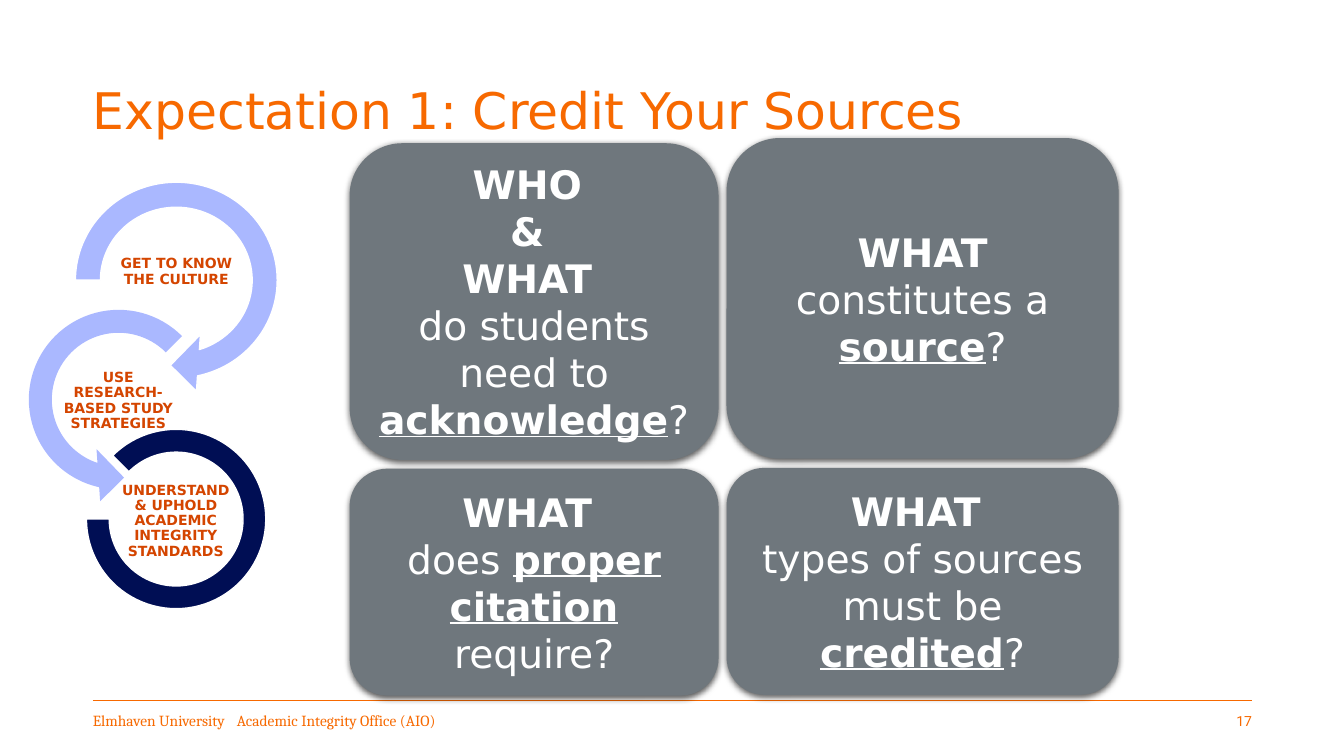
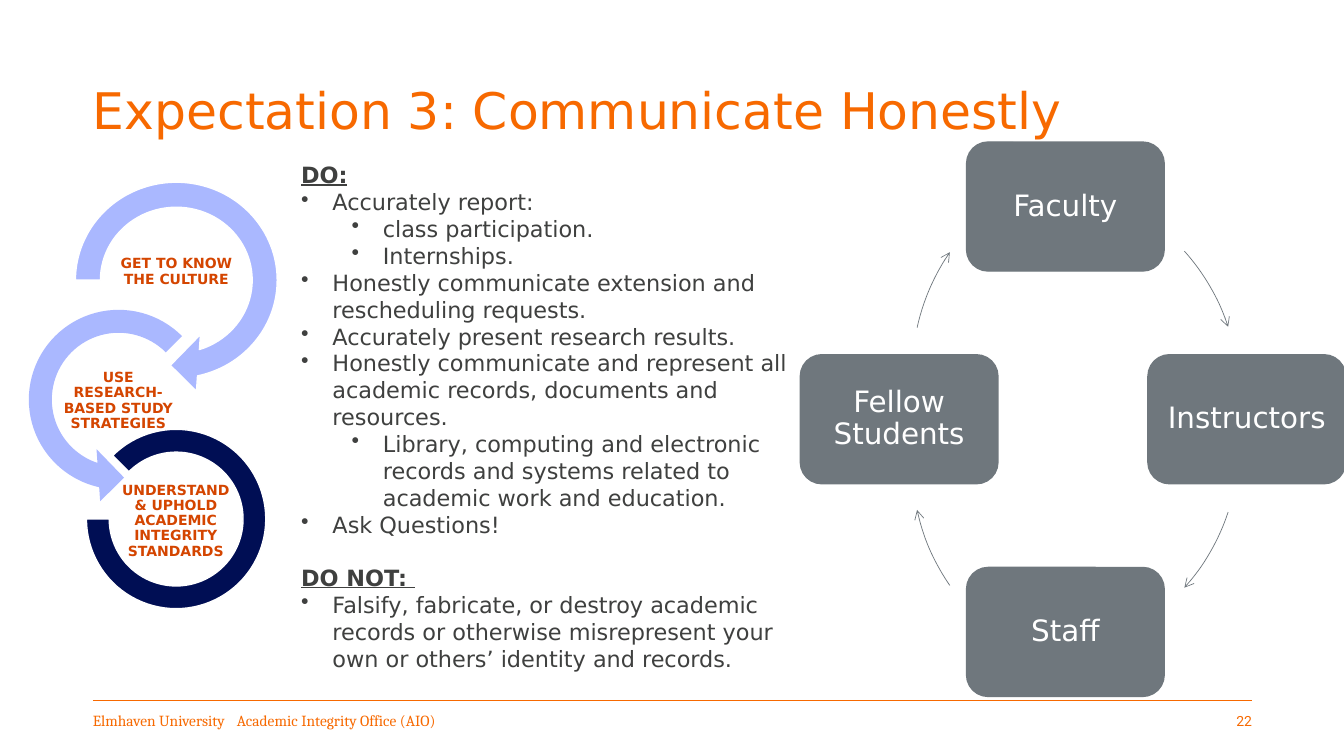
from lxml import etree
from pptx import Presentation
from pptx.dml.color import RGBColor
from pptx.enum.shapes import MSO_CONNECTOR, MSO_SHAPE
from pptx.enum.text import MSO_ANCHOR, PP_ALIGN
from pptx.oxml.ns import qn
from pptx.util import Cm, Pt

ORANGE = RGBColor(0xF7, 0x69, 0x00)
RUST = RGBColor(0xD4, 0x45, 0x00)
PERIWINKLE = RGBColor(0xAA, 0xB8, 0xFF)
NAVY = RGBColor(0x00, 0x0E, 0x54)
GRAY = RGBColor(0x6F, 0x77, 0x7D)
CHARCOAL = RGBColor(0x3F, 0x40, 0x3F)
WHITE = RGBColor(0xFF, 0xFF, 0xFF)

SANS, SERIF, NUMERAL = "DejaVu Sans", "Cambria", "Roboto"
LEFT, CENTER, RIGHT = PP_ALIGN.LEFT, PP_ALIGN.CENTER, PP_ALIGN.RIGHT
TOP, MIDDLE = MSO_ANCHOR.TOP, MSO_ANCHOR.MIDDLE
STRAIGHT = MSO_CONNECTOR.STRAIGHT
ROUNDED, ARC = MSO_SHAPE.ROUNDED_RECTANGLE, MSO_SHAPE.ARC
CIRCULAR, LEFT_CIRCULAR = MSO_SHAPE.CIRCULAR_ARROW, MSO_SHAPE.LEFT_CIRCULAR_ARROW
BLOCK_ARC = MSO_SHAPE.BLOCK_ARC


def write(shape, lines, size, color, font=SANS, align=LEFT, anchor=MIDDLE,
          spacing=1.0, margins=(0, 0.13)):
    frame = shape.text_frame
    frame.word_wrap = True
    frame.vertical_anchor = anchor
    frame.margin_left = frame.margin_right = Cm(margins[0])
    frame.margin_top = frame.margin_bottom = Cm(margins[1])
    for index, line in enumerate(lines):
        para = frame.add_paragraph() if index else frame.paragraphs[0]
        para.alignment = align
        para.line_spacing = spacing
        for text, style in line:
            span = para.add_run()
            span.text = text
            span.font.name = font
            span.font.size = Pt(size)
            span.font.color.rgb = color
            span.font.bold = "b" in style
            span.font.underline = "u" in style


def draw(page, kind, box, fill=None, line=None, width=1, adjustments=()):
    shape = page.shapes.add_shape(kind, *map(Cm, box))
    shape.shadow.inherit = False
    for index, value in enumerate(adjustments):
        shape.adjustments[index] = value
    for part, color in ((shape.fill, fill), (shape.line.fill, line)):
        if color is None:
            part.background()
        else:
            part.solid()
            part.fore_color.rgb = color
    if line is not None:
        shape.line.width = Pt(width)
    return shape


FOOTERS = [
    (2.34, 3.6, "Elmhaven University", 11, SERIF, LEFT),
    (5.97, 8, "Academic Integrity Office (AIO)", 11, SERIF, LEFT),
]
STEPS = [
    (CIRCULAR, (1.5, 4.19, 5.89, 5.74), PERIWINKLE, WHITE, (0.11, 11.423, 45, 108, 0.125),
     (2.82, 5.56, 3.25, 2.59), "GET TO KNOW THE CULTURE"),
    (LEFT_CIRCULAR, (0.36, 7.44, 5.26, 5.26), PERIWINKLE, None, (0.11, 11.423, 63, 189, 0.125),
     (1.52, 9.37, 2.92, 1.47), "USE RESEARCH-BASED STUDY STRATEGIES"),
    (BLOCK_ARC, (2.18, 10.82, 4.52, 4.52), NAVY, WHITE, (135, 108, 0.127),
     (2.97, 12.4, 2.92, 1.47), "UNDERSTAND & UPHOLD ACADEMIC INTEGRITY STANDARDS"),
]

deck = Presentation()
deck.slide_width, deck.slide_height = Cm(33.87), Cm(19.05)
pages = []
for title, number in (("Expectation 1: Credit Your Sources", "17"),
                      ("Expectation 3: Communicate Honestly", "22")):
    page = deck.slides.add_slide(deck.slide_layouts[6])
    pages.append(page)
    rule = page.shapes.add_connector(STRAIGHT, Cm(2.34), Cm(17.65), Cm(31.55), Cm(17.65))
    rule.line.color.rgb = ORANGE
    rule.line.width = Pt(0.5)
    etree.SubElement(rule._element.spPr, qn("a:effectLst"))
    page_number = (26.22, 5.33, number, 10, NUMERAL, RIGHT)
    for left, width, text, size, font, align in FOOTERS + [page_number]:
        box = page.shapes.add_textbox(Cm(left), Cm(17.65), Cm(width), Cm(1.02))
        write(box, [[(text, "")]], size, ORANGE, font, align)
    box = page.shapes.add_textbox(Cm(2.34), Cm(1.02), Cm(29.21), Cm(3.68))
    write(box, [[(title, "")]], 36, ORANGE, spacing=0.9)
    for kind, place, fill, line, adjustments, label_place, label in STEPS:
        draw(page, kind, place, fill, line, adjustments=adjustments)
        box = page.shapes.add_textbox(*map(Cm, label_place))
        write(box, [[(label, "b")]], 10, RUST, align=CENTER, spacing=0.9, margins=(0.03, 0.03))

sources_page, honesty_page = pages

QUESTIONS = [
    ((8.81, 3.61, 9.3, 7.98),
     [[("WHO ", "b")], [("& ", "b")], [("WHAT ", "b")],
      [("do students need to ", ""), ("acknowledge", "bu"), ("? ", "")]]),
    ((18.31, 3.48, 9.88, 8.08),
     [[("WHAT", "b"), (" constitutes a ", ""), ("source", "bu"), ("?", "")]]),
    ((8.81, 11.81, 9.3, 5.72),
     [[("WHAT ", "b")],
      [("does ", ""), ("proper citation", "bu"), (" ", "b"), ("require?", "")]]),
    ((18.31, 11.79, 9.88, 5.72),
     [[("WHAT ", "b")],
      [("types of sources must be ", ""), ("credited", "bu"), ("?", "")]]),
]
for place, lines in QUESTIONS:
    card = draw(sources_page, ROUNDED, place, GRAY)
    write(card, lines, 28, WHITE, align=CENTER, margins=(0.25, 0.13))
    effects = card._element.spPr.find(qn("a:effectLst"))
    shadow = etree.SubElement(effects, qn("a:outerShdw"), blurRad=str(Pt(4.5)),
                              dist=str(Pt(1.5)), dir="5400000", rotWithShape="0")
    shade = etree.SubElement(shadow, qn("a:srgbClr"), val="000000")
    etree.SubElement(shade, qn("a:alpha"), val="63000")

CYCLE = [
    ("Faculty", 24.36, 3.58, (20.5, 4.55), (318.1, 341.8)),
    ("Instructors", 28.93, 8.94, (20.5, 5.87), (18.2, 41.9)),
    ("Staff", 24.36, 14.3, (22.99, 6.35), (145.4, 167.7)),
    ("Fellow Students", 20.17, 8.94, (22.99, 4.04), (192.3, 214.6)),
]
DIAMETER = 10.72
for name, left, top, corner, degrees in CYCLE:
    node = draw(honesty_page, ROUNDED, (left, top, 4.98, 3.25), GRAY, GRAY)
    write(node, [[(name, "")]], 21, WHITE, align=CENTER, spacing=0.9, margins=(0.23, 0.23))
    arrow = draw(honesty_page, ARC, (*corner, DIAMETER, DIAMETER), line=GRAY, width=0.5,
                 adjustments=[angle * 0.6 for angle in degrees])
    outline = arrow._element.spPr.find(qn("a:ln"))
    etree.SubElement(outline, qn("a:tailEnd"), type="arrow")

ADVICE = [
    (0, "DO:"),
    (1, "Accurately report:"),
    (2, "class participation."),
    (2, "Internships."),
    (1, "Honestly communicate extension and rescheduling requests."),
    (1, "Accurately present research results."),
    (1, "Honestly communicate and represent all academic records, documents and resources."),
    (2, "Library, computing and electronic records and systems related to "
        "academic work and education."),
    (1, "Ask Questions!"),
    (0, "DO NOT: "),
    (1, "Falsify, fabricate, or destroy academic records or otherwise misrepresent "
        "your own or others’ identity and records."),
]
INDENTS = {1: 0.79, 2: 2.06}
box = honesty_page.shapes.add_textbox(Cm(7.34), Cm(3.94), Cm(12.83), Cm(13.26))
write(box, [[(text, "" if level else "bu")] for level, text in ADVICE], 16, CHARCOAL,
      anchor=TOP, margins=(0.25, 0.13))
for index, (para, (level, text)) in enumerate(zip(box.text_frame.paragraphs, ADVICE)):
    if level:
        para.level = level - 1
        properties = para._p.get_or_add_pPr()
        properties.set("marL", str(Cm(INDENTS[level])))
        properties.set("indent", str(-Cm(INDENTS[1])))
        etree.SubElement(properties, qn("a:buChar"), char="•")
    elif index:
        para.space_before = Pt(19)

deck.save("out.pptx")
